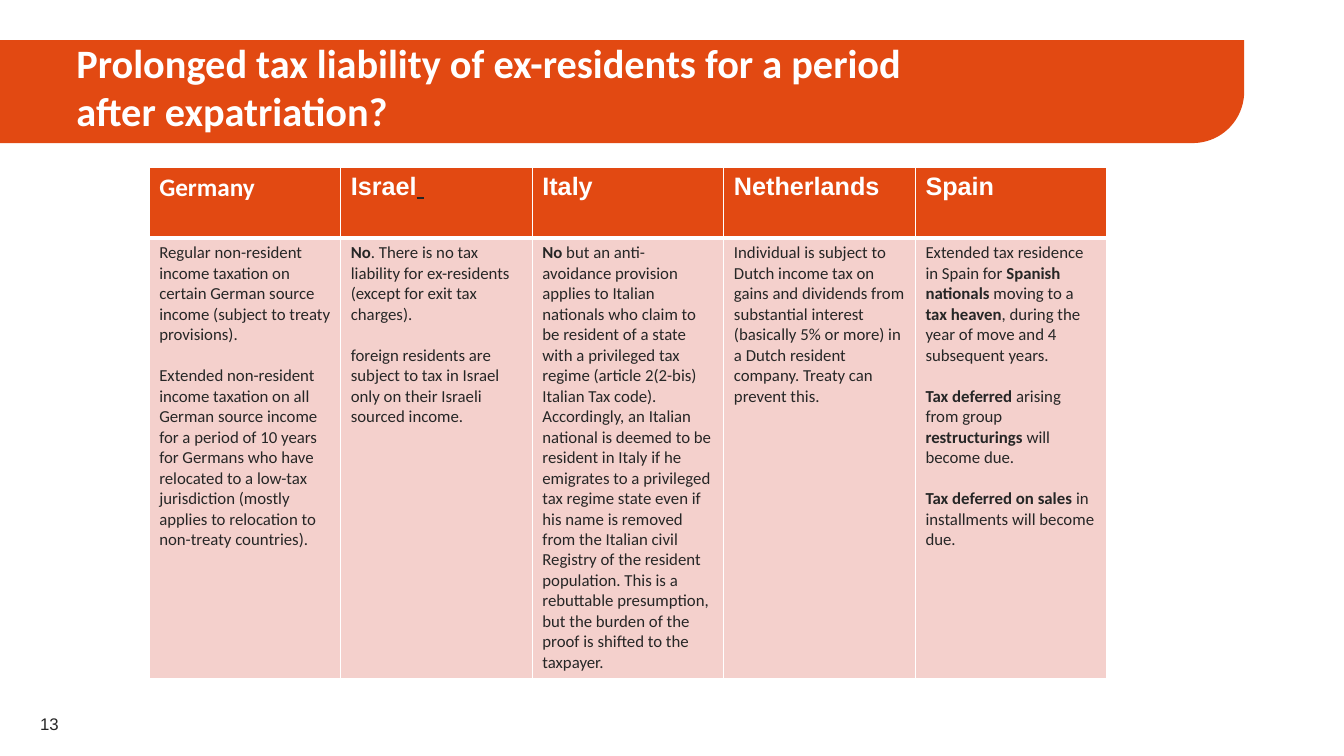
from pptx import Presentation
from pptx.dml.color import RGBColor as Rgb
from pptx.enum.shapes import MSO_SHAPE as Kind
from pptx.enum.text import MSO_ANCHOR as Anchor
from pptx.oxml.ns import qn
from pptx.util import Inches, Pt
from lxml.etree import SubElement as Sub

ORANGE = Rgb(0xE2, 0x49, 0x12)
PINK = Rgb(0xF4, 0xD0, 0xCC)
WHITE = Rgb(0xFF, 0xFF, 0xFF)
DARK = Rgb(0x26, 0x26, 0x26)
SANS, PLAIN = "Calibri", "Arial"


def bold(text):
    return text, {"bold": True}


def write(frame, paras, gap=0, **look):
    """Each paragraph is a list of runs: a string, or a string with its own format."""
    frame.word_wrap = True
    for i, runs in enumerate(paras):
        para = frame.paragraphs[0] if i == 0 else frame.add_paragraph()
        if i:
            para.space_before = Pt(gap)
        for item in runs:
            text, own = (item, {}) if isinstance(item, str) else item
            form = {**look, **own}
            run = para.add_run()
            run.text = text
            font = run.font
            font.name, font.size = form["face"], Pt(form["size"])
            font.color.rgb = form["color"]
            font.bold = form.get("bold", False)
            font.underline = form.get("under", False)


class Deck:
    def __init__(self, wide, high):
        self.file = Presentation()
        self.file.slide_width, self.file.slide_height = Inches(wide), Inches(high)
        self.slide = self.file.slides.add_slide(self.file.slide_layouts[6])
        self.shapes = self.slide.shapes

    def across(self, share):
        return int(self.file.slide_width * share / 100)

    def down(self, share):
        return int(self.file.slide_height * share / 100)

    def area(self, x, y, w, h):
        """Turn percentages of the slide into lengths."""
        return self.across(x), self.down(y), self.across(w), self.down(h)

    def band(self, *box):
        shape = self.shapes.add_shape(Kind.ROUND_1_RECTANGLE, *self.area(*box))
        shape.adjustments[0] = 0.5
        shape.shadow.inherit = False
        shape.fill.solid()
        shape.fill.fore_color.rgb = ORANGE
        shape.line.fill.background()
        shape._element.spPr.find(qn("a:xfrm")).set("flipV", "1")

    def text(self, box, words, **look):
        frame = self.shapes.add_textbox(*self.area(*box)).text_frame
        frame.vertical_anchor = Anchor.MIDDLE
        write(frame, [[words]], **look)

    def cell(self, cell, paras, fill, edges, **look):
        props = cell._tc.get_or_add_tcPr()
        for side, width in edges.items():
            line = Sub(props, qn("a:ln" + side), w=str(Pt(width)))
            Sub(Sub(line, qn("a:solidFill")), qn("a:srgbClr"), val=str(WHITE))
        cell.fill.solid()
        cell.fill.fore_color.rgb = fill
        write(cell.text_frame, paras, **look)

    def table(self, x, y, w, rows, data):
        box = self.area(x, y, w, sum(rows))
        table = self.shapes.add_table(len(rows), len(data), *box).table
        table.first_row = table.horz_banding = False
        for row, share in zip(table.rows, rows):
            row.height = self.down(share)
        for i, (head, face, body) in enumerate(data):
            table.columns[i].width = self.across(w / len(data))
            self.cell(table.cell(0, i), [head], ORANGE,
                      {"L": 1, "R": 1, "T": 1, "B": 3},
                      face=face, size=18, color=WHITE, bold=True)
            self.cell(table.cell(1, i), body, PINK,
                      {"L": 1, "R": 1, "T": 3, "B": 1},
                      gap=14.65, face=SANS, size=12, color=DARK)


# Country: heading, heading font, paragraphs
LANDS = [
    (["Germany"], SANS, [
        ["Regular non-resident income taxation on certain German source income "
         "(subject to treaty provisions)."],
        ["Extended non-resident income taxation on all German source income for a "
         "period of 10 years for Germans who have relocated to a low-tax "
         "jurisdiction (mostly applies to relocation to non-treaty countries)."]]),
    (["Israel", (" ", {"color": DARK, "under": True})], PLAIN, [
        [bold("No"), ". There is no tax liability for ex-residents "
         "(except for exit tax charges)."],
        ["foreign residents are subject to tax in Israel only on their Israeli "
         "sourced income."]]),
    (["Italy"], PLAIN, [
        [bold("No"), " but an anti-avoidance provision applies to Italian nationals "
         "who claim to be resident of a state with a privileged tax regime "
         "(article 2(2-bis) Italian Tax code). Accordingly, an Italian national is "
         "deemed to be resident in Italy if he emigrates to a privileged tax regime "
         "state even if his name is removed from the Italian civil Registry of the "
         "resident population. This is a rebuttable presumption, but the burden of "
         "the proof is shifted to the taxpayer."]]),
    (["Netherlands"], PLAIN, [
        ["Individual is subject to Dutch income tax on gains and dividends from "
         "substantial interest (basically 5% or more) in a Dutch resident company. "
         "Treaty can prevent this."]]),
    (["Spain"], PLAIN, [
        ["Extended tax residence in Spain for ", bold("Spanish nationals"),
         " moving to a ", bold("tax heaven"),
         ", during the year of move and 4 subsequent years."],
        [bold("Tax deferred "), "arising from group ", bold("restructurings"),
         " will become due."],
        [bold("Tax deferred on sales "), "in installments will become due."]]),
]


def main():
    deck = Deck(13.33, 7.5)

    # Title band
    deck.band(0, 5.33, 92.57, 13.6)
    deck.text((4.95, 5.33, 65.87, 12.27),
              "Prolonged tax liability of ex-residents for a period after expatriation?",
              face=SANS, size=28.8, color=WHITE, bold=True)

    # Page number
    deck.text((2.25, 93.07, 4.73, 5.33), "13", face=PLAIN, size=12, color=DARK)

    # Country table
    deck.table(11.1, 22.13, 71.27, (9.33, 58.27), LANDS)

    deck.file.save("out.pptx")


if __name__ == "__main__":
    main()
